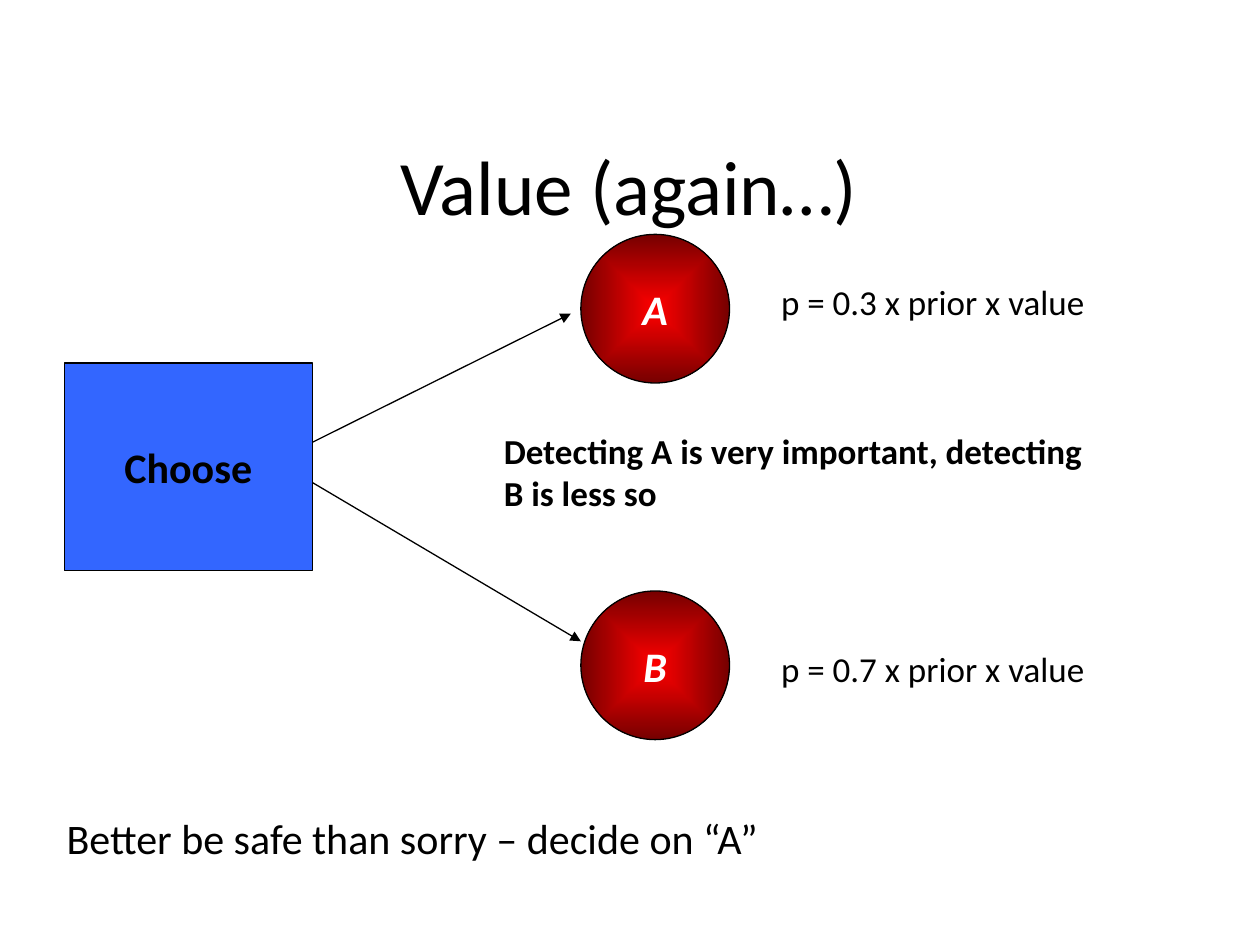
from dataclasses import dataclass

from pptx import Presentation
from pptx.dml.color import RGBColor
from pptx.enum.shapes import MSO_CONNECTOR, MSO_SHAPE
from pptx.enum.text import MSO_ANCHOR, PP_ALIGN
from pptx.oxml import parse_xml
from pptx.oxml.ns import nsdecls, qn
from pptx.util import Inches, Pt


@dataclass(frozen=True)
class Theme:
    font: str = "Calibri"
    black: RGBColor = RGBColor(0, 0, 0)
    white: RGBColor = RGBColor(255, 255, 255)
    blue: RGBColor = RGBColor(0x33, 0x66, 0xFF)
    red: RGBColor = RGBColor(255, 0, 0)
    dark: RGBColor = RGBColor(0x76, 0, 0)
    head: int = 44
    large: int = 24
    small: int = 20
    line: float = 0.75


class Page:
    def __init__(self, slide, theme):
        self.slide = slide
        self.theme = theme

    def place(self, shape, box):
        shape.left, shape.top, shape.width, shape.height = map(Inches, box)

    def label(self, shape, text, size, color=None, bold=False, slant=False,
              align=PP_ALIGN.LEFT, anchor=MSO_ANCHOR.TOP, wrap=True):
        frame = shape.text_frame
        frame.text = text
        frame.word_wrap = wrap
        frame.vertical_anchor = anchor
        part = frame.paragraphs[0]
        part.alignment = align
        for run in part.runs:
            font = run.font
            font.name = self.theme.font
            font.size = Pt(size)
            font.bold = bold
            font.italic = slant
            font.color.rgb = color or self.theme.black

    def title(self, text, box):
        shape = self.slide.shapes.title
        self.place(shape, box)
        self.label(shape, text, self.theme.head,
                   align=PP_ALIGN.CENTER, anchor=MSO_ANCHOR.MIDDLE)

    def note(self, text, box, size, bold=False):
        shape = self.slide.shapes.add_textbox(*map(Inches, box))
        self.label(shape, text, size, bold=bold)

    def node(self, kind, text, box, color, slant=False):
        shape = self.slide.shapes.add_shape(kind, *map(Inches, box))
        shape.shadow.inherit = False
        shape.line.color.rgb = self.theme.black
        shape.line.width = Pt(self.theme.line)
        self.label(shape, text, self.theme.large, color, True, slant,
                   PP_ALIGN.CENTER, MSO_ANCHOR.MIDDLE, False)
        return shape

    def block(self, text, box):
        shape = self.node(MSO_SHAPE.RECTANGLE, text, box, self.theme.black)
        shape.fill.solid()
        shape.fill.fore_color.rgb = self.theme.blue

    def ball(self, text, box):
        shape = self.node(MSO_SHAPE.OVAL, text, box, self.theme.white, True)
        shape.fill.gradient()
        shades = (self.theme.red, self.theme.dark)
        for stop, shade, spot in zip(shape.fill.gradient_stops, shades, (0, 1)):
            stop.color.rgb = shade
            stop.position = spot
        grad = shape._element.spPr.find(qn("a:gradFill"))
        grad.remove(grad.find(qn("a:lin")))
        grad.append(parse_xml(
            f'<a:path {nsdecls("a")} path="shape"><a:fillToRect l="50000" '
            't="50000" r="50000" b="50000"/></a:path>'))

    def arrow(self, start, end):
        link = self.slide.shapes.add_connector(
            MSO_CONNECTOR.STRAIGHT, *map(Inches, start + end))
        link.line.color.rgb = self.theme.black
        link.line.width = Pt(self.theme.line)
        props = link._element.spPr
        props.find(qn("a:ln")).append(
            parse_xml(f'<a:tailEnd {nsdecls("a")} type="triangle"/>'))
        props.append(parse_xml(f'<a:effectLst {nsdecls("a")}/>'))


def main():
    deck = Presentation()
    deck.slide_width, deck.slide_height = Inches(10), Inches(7.5)
    theme = Theme()
    page = Page(deck.slides.add_slide(deck.slide_layouts[5]), theme)

    page.title("Value (again…)", (0.35, 0.76, 9.28, 1.42))
    page.arrow((2.48, 3.83), (4.61, 5.09))
    page.arrow((2.48, 3.51), (4.53, 2.49))
    for name, top, odds, level in (("A", 1.86, "0.3", 2.18),
                                   ("B", 4.69, "0.7", 5.09)):
        page.ball(name, (4.61, top, 1.18, 1.18))
        page.note(f"p = {odds} x prior x value", (6.1, level, 3.39, 0.43),
                  theme.small)
    page.note("Better be safe than sorry – decide on “A”",
              (0.43, 6.4, 7.88, 0.5), theme.large)
    page.block("Choose", (0.51, 2.88, 1.97, 1.65))
    page.note("Detecting A is very important, detecting B is less so",
              (3.9, 3.36, 4.96, 0.77), theme.small, True)
    deck.save("out.pptx")


if __name__ == "__main__":
    main()
